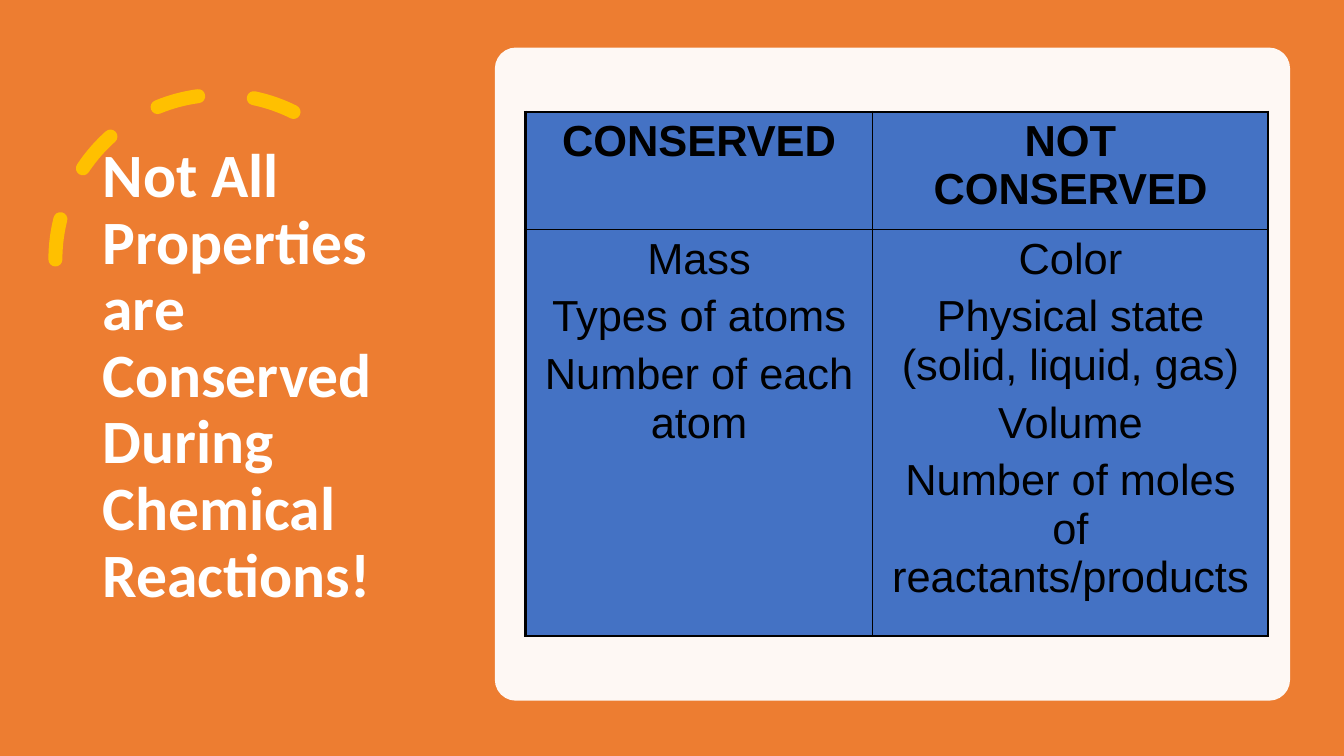
from dataclasses import dataclass
from lxml import etree
from pptx import Presentation
from pptx.dml.color import RGBColor
from pptx.enum.dml import MSO_LINE
from pptx.enum.shapes import MSO_SHAPE
from pptx.enum.text import MSO_ANCHOR, PP_ALIGN
from pptx.oxml import parse_xml
from pptx.oxml.ns import nsdecls, qn
from pptx.util import Pt

RECT, ROUND, ARC = MSO_SHAPE.RECTANGLE, MSO_SHAPE.ROUNDED_RECTANGLE, MSO_SHAPE.ARC
DASH, MIDDLE, CENTER = MSO_LINE.DASH, MSO_ANCHOR.MIDDLE, PP_ALIGN.CENTER


@dataclass
class Theme:
    back: str = "ED7D31"
    accent: str = "FFC000"
    light: str = "FFFFFF"
    ink: str = "000000"
    cell: str = "4472C4"
    title: float = 44
    body: float = 31


theme = Theme()


def color(code):
    return RGBColor.from_string(code)


def style(font, **format):
    font.color.rgb = color(format.pop("color"))
    for name, value in format.items():
        setattr(font, name, value)


deck = Presentation()
deck.slide_width, deck.slide_height = Pt(960), Pt(540)
slide = deck.slides.add_slide(deck.slide_layouts[6])
shapes = slide.shapes

back = shapes.add_shape(RECT, 0, 0, Pt(960), Pt(540))
arc = shapes.add_shape(ARC, Pt(39.6), Pt(67.7), Pt(235.4), Pt(235.4))
title = shapes.add_textbox(Pt(66.2), Pt(50.4), Pt(232.6), Pt(438.5))
card = shapes.add_shape(ROUND, Pt(353.5), Pt(34), Pt(568), Pt(466.5))

for shape, fill in ((back, theme.back), (card, theme.light)):
    shape.shadow.inherit = False
    shape.fill.solid()
    shape.fill.fore_color.rgb = color(fill)
    shape.line.fill.background()
card.adjustments[0] = 0.032
tint = card.element.spPr.find(".//" + qn("a:srgbClr"))
etree.SubElement(tint, qn("a:alpha"), val="95000")

arc.shadow.inherit = False
arc.adjustments[0], arc.adjustments[1] = 146.13, 0
arc.fill.background()
arc.line.color.rgb = color(theme.accent)
arc.line.width = Pt(10)
arc.line.dash_style = DASH
arc.element.spPr.find(qn("a:ln")).set("cap", "rnd")
arc.element.spPr.find(qn("a:xfrm")).set("flipH", "1")

frame = title.text_frame
frame.word_wrap = True
frame.vertical_anchor = MIDDLE
para = frame.paragraphs[0]
para.text = "Not All Properties are Conserved\vDuring Chemical Reactions!"
para.line_spacing = 0.9
for run in para.runs:
    style(run.font, name="Calibri", size=Pt(theme.title), bold=True, color=theme.light)

rows = [
    [["CONSERVED"], ["NOT CONSERVED"]],
    [
        ["Mass", "Types of atoms", "Number of each atom"],
        ["Color", "Physical state (solid, liquid, gas)", "Volume",
         "Number of moles of reactants/products"],
    ],
]
table = shapes.add_table(2, 2, Pt(375.1), Pt(79.9), Pt(530.6), Pt(374.4)).table
table.first_row = table.horz_banding = False
for col, width in zip(table.columns, (248.4, 282.2)):
    col.width = Pt(width)
for row, height in zip(table.rows, (84.2, 290.2)):
    row.height = Pt(height)

for r, row in enumerate(rows):
    for c, lines in enumerate(row):
        cell = table.cell(r, c)
        edges = {"lnL": c == 0, "lnR": c == 1, "lnT": r == 0, "lnB": r == 1}
        for tag, outer in edges.items():
            width = Pt(2.25 if outer else 1)
            cell._tc.get_or_add_tcPr().append(parse_xml(
                f'<a:{tag} {nsdecls("a")} w="{width}"><a:solidFill>'
                f'<a:srgbClr val="{theme.ink}"/></a:solidFill></a:{tag}>'))
        cell.fill.solid()
        cell.fill.fore_color.rgb = color(theme.cell)
        cell.margin_left = cell.margin_right = Pt(7.2)
        cell.margin_top = cell.margin_bottom = Pt(3.6)
        cell.text = "\n".join(lines)
        for para in cell.text_frame.paragraphs:
            para.alignment = CENTER
            para.space_before = Pt(6.5)
            style(para.runs[0].font, name="Arial", size=Pt(theme.body),
                  bold=r == 0, color=theme.ink)

deck.save("out.pptx")
